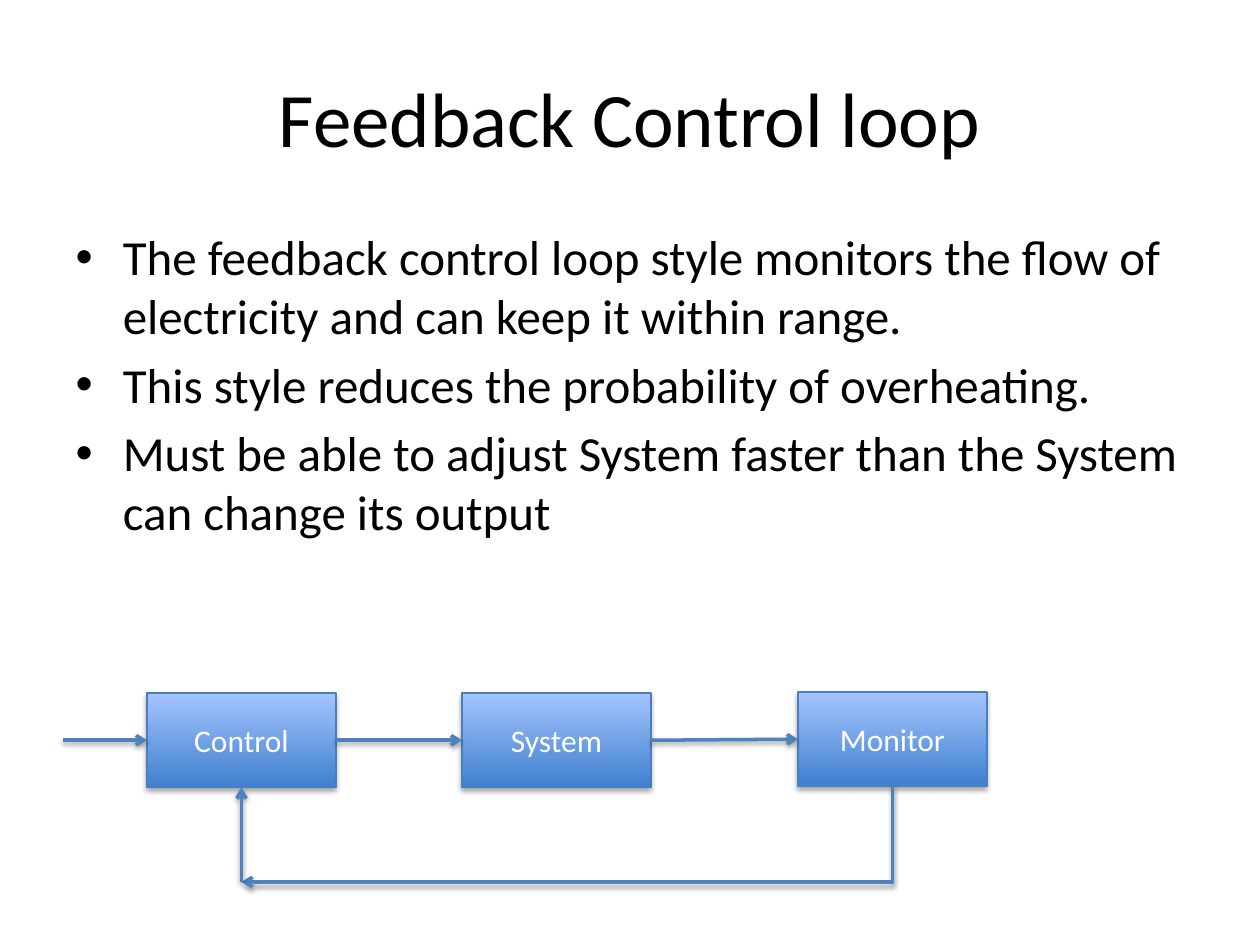
from lxml import etree
from pptx import Presentation
from pptx.dml.color import RGBColor
from pptx.enum.shapes import MSO_CONNECTOR, MSO_SHAPE
from pptx.enum.text import MSO_ANCHOR, MSO_AUTO_SIZE, PP_ALIGN
from pptx.oxml.ns import qn
from pptx.util import Inches, Pt

RECT = MSO_SHAPE.RECTANGLE
LINE, ELBOW = MSO_CONNECTOR.STRAIGHT, MSO_CONNECTOR.ELBOW
MIDDLE, CENTER = MSO_ANCHOR.MIDDLE, PP_ALIGN.CENTER
FIXED = MSO_AUTO_SIZE.NONE

BLACK = RGBColor(0x00, 0x00, 0x00)
WHITE = RGBColor(0xFF, 0xFF, 0xFF)
DARK = RGBColor(0x3F, 0x80, 0xCE)
LIGHT = RGBColor(0xA4, 0xC4, 0xFF)
EDGE = RGBColor(0x4B, 0x7E, 0xBC)
BLUE = RGBColor(0x4F, 0x81, 0xBD)
FONT = "Calibri"

COLS, ROWS = 120, 90
WIDE, HIGH = 18, 9
TOP, BASE = 66, 84
BOXES = [("Control", 14, TOP), ("System", 44, TOP), ("Monitor", 76, TOP - 0.1)]
POINTS = [
    "The feedback control loop style monitors the flow of electricity and can keep it within range.",
    "This style reduces the probability of overheating.",
    "Must be able to adjust System faster than the System can change its output",
]


def cell(n):
    """Turn a count of grid cells into a length."""
    return Inches(10 * n / COLS)


def place(shape, left, top, wide, high):
    """Move a shape to a grid position and size."""
    shape.left, shape.top = cell(left), cell(top)
    shape.width, shape.height = cell(wide), cell(high)


def style(para, size, color):
    """Format the runs of a paragraph."""
    for run in para.runs:
        run.font.name, run.font.size = FONT, Pt(size)
        run.font.color.rgb = color


def shade(shape, dist, alpha):
    """Give a shape a soft shadow that falls straight down."""
    effect = etree.SubElement(shape._element.spPr, qn("a:effectLst"))
    outer = etree.SubElement(
        effect, qn("a:outerShdw"), blurRad=str(Pt(3.1)), dist=str(Pt(dist)),
        dir="5400000", rotWithShape="0")
    color = etree.SubElement(outer, qn("a:srgbClr"), val=str(BLACK))
    etree.SubElement(color, qn("a:alpha"), val=str(alpha * 1000))


def add_box(slide, text, left, top):
    """Add a labelled box with a gradient."""
    box = slide.shapes.add_shape(RECT, 0, 0, 0, 0)
    place(box, left, top, WIDE, HIGH)
    box.fill.gradient()
    box.fill.gradient_angle = 90
    for stop, color in zip(box.fill.gradient_stops, (DARK, LIGHT)):
        stop.color.rgb = color
    box.line.color.rgb, box.line.width = EDGE, Pt(0.75)
    shade(box, 1.8, 35)
    frame = box.text_frame
    frame.text, frame.vertical_anchor = text, MIDDLE
    para = frame.paragraphs[0]
    para.alignment = CENTER
    style(para, 18, WHITE)


def add_arrow(slide, start, end, kind=LINE):
    """Add an arrow between two grid points."""
    arrow = slide.shapes.add_connector(kind, *map(cell, start + end))
    arrow.line.color.rgb, arrow.line.width = BLUE, Pt(2)
    etree.SubElement(arrow.line._get_or_add_ln(), qn("a:tailEnd"), type="arrow")
    shade(arrow, 1.6, 38)
    return arrow


def add_turn(slide, start, end):
    """Add an arrow that runs down and then left."""
    (x1, y1), (x2, y2) = start, end
    wide, high = y2 - y1, x1 - x2
    left, top = (x1 + x2 - wide) / 2, (y1 + y2 - high) / 2
    arrow = add_arrow(slide, (left, top), (left + wide, top + high), ELBOW)
    props = arrow._element.spPr
    props.find(qn("a:xfrm")).set("rot", "5400000")
    props.find(qn("a:prstGeom")).set("prst", "bentConnector2")


def add_words(slide):
    """Fill the title and the bullet list."""
    title, body = slide.shapes.title, slide.placeholders[1]
    place(title, 6, 3.6, 108, 15)
    title.text_frame.text = "Feedback Control loop"
    title.text_frame.vertical_anchor = MIDDLE
    head = title.text_frame.paragraphs[0]
    head.alignment = CENTER
    style(head, 44, BLACK)
    place(body, 6, 21, 108, 43)
    frame = body.text_frame
    frame.text, frame.auto_size = "\n".join(POINTS), FIXED
    for para in frame.paragraphs:
        style(para, 28, BLACK)
    frame.paragraphs[0].space_before = Pt(0)


def add_loop(slide):
    """Draw the boxes and the arrows of the loop."""
    for name, left, top in BOXES:
        add_box(slide, name, left, top)
    ports = [(left, top + HIGH / 2) for _, left, top in BOXES]
    exits = [(6, ports[0][1])] + [(x + WIDE, y) for x, y in ports[:-1]]
    for start, end in zip(exits, ports):
        add_arrow(slide, start, end)
    first, last = [(x + WIDE / 2, y + HIGH) for _, x, y in (BOXES[0], BOXES[-1])]
    corner = (first[0], BASE)
    add_turn(slide, last, corner)
    add_arrow(slide, corner, first)


def main():
    """Build and save the slide."""
    deck = Presentation()
    deck.slide_width, deck.slide_height = cell(COLS), cell(ROWS)
    slide = deck.slides.add_slide(deck.slide_layouts[1])
    add_words(slide)
    add_loop(slide)
    deck.save("out.pptx")


if __name__ == "__main__":
    main()
